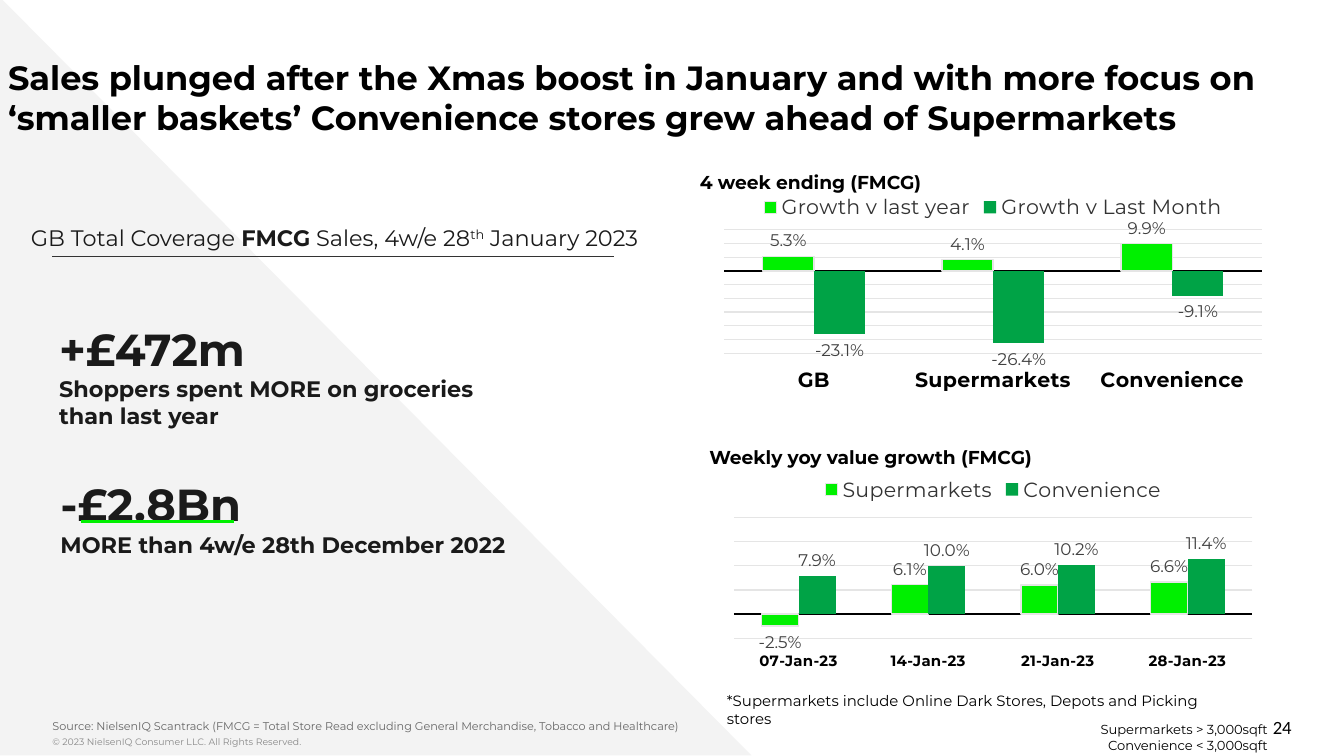
from dataclasses import dataclass

from lxml import etree
from pptx import Presentation
from pptx.chart.data import CategoryChartData
from pptx.dml.color import RGBColor
from pptx.enum.chart import (XL_CHART_TYPE, XL_LABEL_POSITION, XL_LEGEND_POSITION,
                             XL_TICK_LABEL_POSITION, XL_TICK_MARK)
from pptx.enum.shapes import MSO_CONNECTOR, MSO_SHAPE
from pptx.enum.text import MSO_ANCHOR, MSO_AUTO_SIZE, PP_ALIGN
from pptx.oxml import parse_xml
from pptx.oxml.ns import nsdecls, qn
from pptx.util import Inches, Pt

BLACK = RGBColor(0, 0, 0)
INK = RGBColor(0x1A, 0x1A, 0x1A)
DARK = RGBColor(0x33, 0x33, 0x33)
LABEL = RGBColor(0x40, 0x40, 0x40)
GREY = RGBColor(0x66, 0x66, 0x66)
PALE = RGBColor(0x88, 0x88, 0x88)
GRID = RGBColor(0xE5, 0xE5, 0xE5)
WEDGE = RGBColor(0xF3, 0xF3, 0xF3)
LIME = RGBColor(0x00, 0xF0, 0x00)
GREEN = RGBColor(0x00, 0xA3, 0x46)
FONT = "Montserrat"
COLUMNS = XL_CHART_TYPE.COLUMN_CLUSTERED
OUTSIDE = XL_LABEL_POSITION.OUTSIDE_END
TOP = XL_LEGEND_POSITION.TOP
LOW = XL_TICK_LABEL_POSITION.LOW
NO_TICK = XL_TICK_MARK.NONE
LEFT, RIGHT = PP_ALIGN.LEFT, PP_ALIGN.RIGHT
WIDE, HIGH = 4.16, 1.62  # size of each chart


@dataclass
class Note:
    """A text box; box is left, top, width, height and pad its side inset."""
    text: str
    box: tuple
    size: float
    color: RGBColor = BLACK
    bold: bool = False
    align: PP_ALIGN = LEFT
    pad: float = 0.1
    wrap: bool = True
    font: str = FONT


@dataclass
class Fact:
    value: str
    text: str
    box: tuple


@dataclass
class Graph:
    """A column chart; plot is the inner area in inches within the chart."""
    top: float
    cats: list
    series: dict
    low: float
    high: float
    size: float
    plot: tuple


NOTES = [
    Note("© 2023 NielsenIQ Consumer LLC. All Rights Reserved.",
         (0.39, 5.43, 5.54, 0.2), 5, PALE, pad=0),
    Note("24", (7.36, 5.28, 2.25, 0.27), 10, align=RIGHT, pad=0, font="Calibri"),
    Note("Source: NielsenIQ Scantrack (FMCG = Total Store Read excluding "
         "General Merchandise, Tobacco and Healthcare)",
         (0.39, 5.3, 8.76, 0.2), 6, GREY, pad=0),
    Note("*Supermarkets include Online Dark Stores, Depots and Picking stores",
         (5.31, 5.1, 3.93, 0.37), 8),
    Note("Supermarkets > 3,000sqft\nConvenience < 3,000sqft",
         (6.56, 5.32, 2.97, 0.34), 7, align=RIGHT),
    Note("4 week ending (FMCG)", (5.11, 1.22, 1.87, 0.27), 10, bold=True, wrap=False),
    Note("Weekly yoy value growth (FMCG)", (5.18, 3.27, 2.7, 0.27), 10,
         bold=True, wrap=False),
]
FACTS = [
    Fact("+£472m", "Shoppers spent MORE on groceries than last year",
         (0.44, 2.39, 3.17, 0.81)),
    Fact("-£2.8Bn", "MORE than 4w/e 28th December 2022", (0.45, 3.55, 3.45, 0.61)),
]
GRAPHS = [
    Graph(1.33, ["GB", "Supermarkets", "Convenience"],
          {"Growth v last year": (0.053, 0.041, 0.099),
           "Growth v Last Month": (-0.231, -0.264, -0.091)},
          -0.3, 0.15, 11, (0.08, 0.38, 4, 0.92)),
    Graph(3.43, ["07-Jan-23", "14-Jan-23", "21-Jan-23", "28-Jan-23"],
          {"Supermarkets": (-0.025, 0.061, 0.06, 0.066),
           "Convenience": (0.079, 0.1, 0.102, 0.114)},
          -0.05, 0.2, 8, (0.15, 0.42, 3.86, 0.9)),
]


def style(font, size: float, color: RGBColor, bold: bool = False, name: str = FONT) -> None:
    font.name, font.size, font.bold = name, Pt(size), bold
    font.color.rgb = color


def add_box(slide, box: tuple, pad: float = 0, edge: float = 0.05, wrap: bool = True):
    """Add an empty text box and return its text frame."""
    frame = slide.shapes.add_textbox(*map(Inches, box)).text_frame
    frame.word_wrap = wrap
    frame.margin_left = frame.margin_right = Inches(pad)
    frame.margin_top = frame.margin_bottom = Inches(edge)
    return frame


def add_note(slide, note: Note) -> None:
    frame = add_box(slide, note.box, note.pad, wrap=note.wrap)
    frame.text = note.text
    for para in frame.paragraphs:
        para.alignment = note.align
        for run in para.runs:
            style(run.font, note.size, note.color, note.bold, note.font)


def add_fact(slide, fact: Fact) -> None:
    para = add_box(slide, fact.box, edge=0).paragraphs[0]
    para.text = f"{fact.value}\v{fact.text}"
    for run, size in zip(para.runs, (24, 12)):
        style(run.font, size, INK, True)


def add_rule(slide, left: float, right: float, y: float, color: RGBColor, width: float) -> None:
    rule = slide.shapes.add_connector(MSO_CONNECTOR.STRAIGHT, Inches(left), Inches(y),
                                      Inches(right), Inches(y))
    rule.line.color.rgb, rule.line.width = color, Pt(width)
    etree.SubElement(rule._element.spPr, qn("a:effectLst"))


def place_plot(chart, plot: tuple) -> None:
    """Fix the inner plot area inside the chart."""
    area = chart._chartSpace.chart.plotArea
    for old in area.findall(qn("c:layout")):
        area.remove(old)
    spots = "".join(f'<c:{tag} val="{val / full}"/>'
                    for tag, val, full in zip("xywh", plot, (WIDE, HIGH) * 2))
    area.insert(0, parse_xml(
        f'<c:layout {nsdecls("c")}><c:manualLayout><c:layoutTarget val="inner"/>'
        f'<c:xMode val="edge"/><c:yMode val="edge"/>{spots}</c:manualLayout></c:layout>'))


def add_graph(slide, graph: Graph) -> None:
    data = CategoryChartData(number_format="0.0%")
    data.categories = graph.cats
    for name, vals in graph.series.items():
        data.add_series(name, vals)
    box = map(Inches, (5.31, graph.top, WIDE, HIGH))
    chart = slide.shapes.add_chart(COLUMNS, *box, data).chart
    style(chart.font, 10, BLACK, name="Arial")
    chart.has_title = False
    chart.has_legend = True
    chart.legend.position, chart.legend.include_in_layout = TOP, False
    style(chart.legend.font, 11, DARK)

    cat, val = chart.category_axis, chart.value_axis
    cat.tick_label_position, cat.major_tick_mark = LOW, NO_TICK
    cat.format.line.color.rgb, cat.format.line.width = BLACK, Pt(0.75)
    style(cat.tick_labels.font, graph.size, BLACK, True)
    val.visible = False
    val.minimum_scale, val.maximum_scale, val.major_unit = graph.low, graph.high, 0.05
    lines = val.major_gridlines.format.line
    lines.color.rgb, lines.width = GRID, Pt(0.75)

    plot = chart.plots[0]
    plot.gap_width, plot.overlap, plot.vary_by_categories = 150, 0, False
    for series, color in zip(plot.series, (LIME, GREEN)):
        series.invert_if_negative = False
        series.format.fill.solid()
        series.format.fill.fore_color.rgb = color
        tags = series.data_labels
        tags.show_value, tags.position = True, OUTSIDE
        tags.number_format, tags.number_format_is_linked = "0.0%", False
        style(tags.font, 9, LABEL)
    edge = plot.series[0].format.line
    edge.color.rgb, edge.width = GRID, Pt(0.75)
    place_plot(chart, graph.plot)


def add_wedge(slide) -> None:
    wedge = slide.shapes.add_shape(MSO_SHAPE.RIGHT_TRIANGLE, 0, Inches(-0.02),
                                   Inches(5.59), Inches(5.64))
    wedge.shadow.inherit = False
    wedge.fill.solid()
    wedge.fill.fore_color.rgb = WEDGE
    wedge.line.fill.background()
    slide.shapes._spTree.insert(2, wedge._element)


def set_title(slide, text: str) -> None:
    title = slide.shapes.title
    title.left, title.top, title.width, title.height = map(Inches, (0.06, 0.32, 9.88, 0.44))
    frame = title.text_frame
    frame.text = text
    frame.auto_size, frame.vertical_anchor = MSO_AUTO_SIZE.NONE, MSO_ANCHOR.TOP
    frame.word_wrap = True
    frame.margin_left = frame.margin_right = 0
    frame.margin_top = frame.margin_bottom = Inches(0.1)
    frame.paragraphs[0].alignment = LEFT
    style(frame.paragraphs[0].runs[0].font, 18, BLACK, True)


def add_heading(slide) -> None:
    para = add_box(slide, (0.23, 1.62, 5.1, 0.27)).paragraphs[0]
    for text in ("GB Total Coverage ", "FMCG", " Sales, 4w/e 28", "th", " January 2023"):
        run = para.add_run()
        run.text = text
        style(run.font, 12, INK, text == "FMCG")
        if text == "th":
            run._r.get_or_add_rPr().set("baseline", "30000")


def main() -> None:
    deck = Presentation()
    deck.slide_width = Inches(10)
    deck.slide_height = deck.slide_width * 9 // 16
    slide = deck.slides.add_slide(deck.slide_layouts[5])
    add_wedge(slide)
    set_title(slide, "Sales plunged after the Xmas boost in January and with more focus on "
                     "‘smaller baskets’ Convenience stores grew ahead of Supermarkets")
    add_heading(slide)
    add_rule(slide, 0.39, 4.57, 1.91, DARK, 0.75)
    for fact in FACTS:
        add_fact(slide, fact)
    add_rule(slide, 0.6, 1.74, 3.88, LIME, 1.5)
    for graph in GRAPHS:
        add_graph(slide, graph)
    for note in NOTES:
        add_note(slide, note)
    deck.save("out.pptx")


if __name__ == "__main__":
    main()
